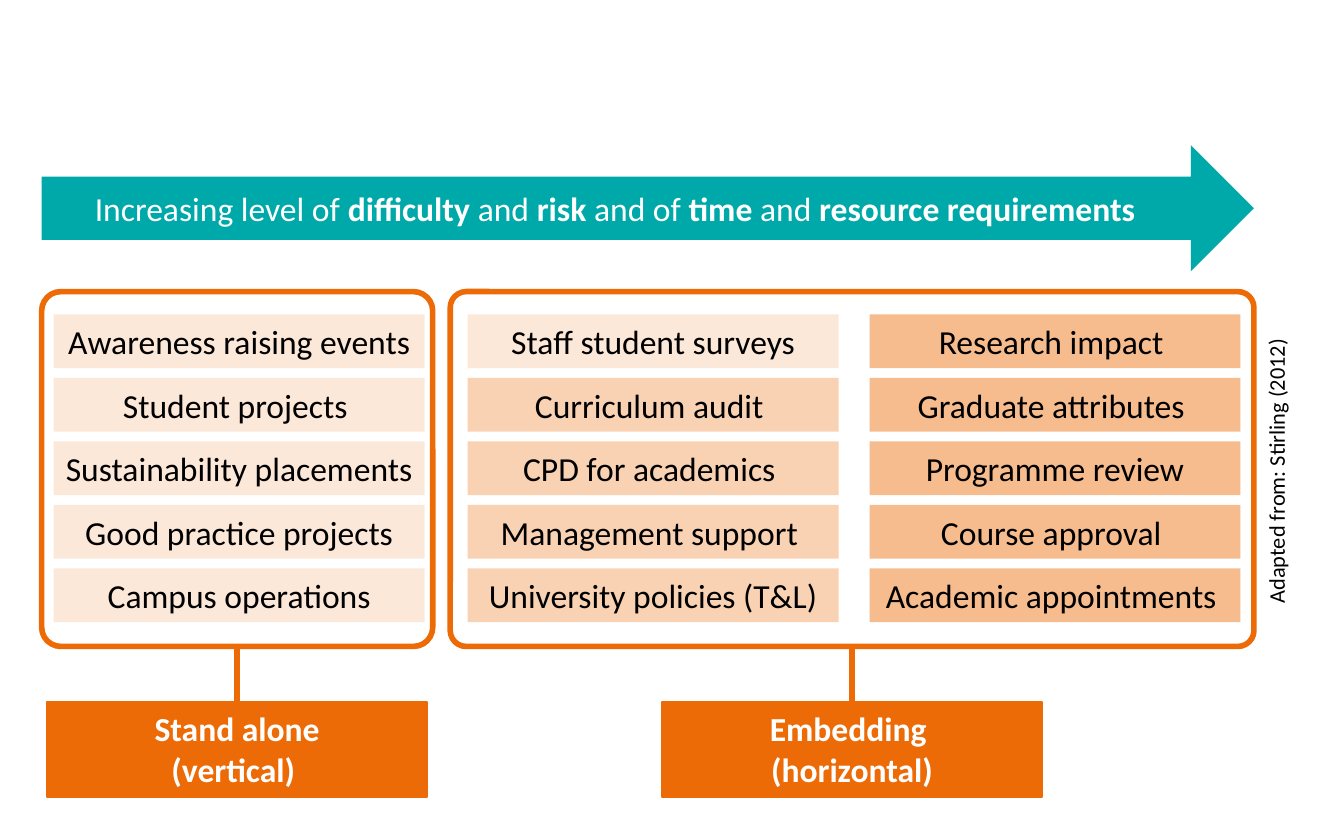
from dataclasses import dataclass

from lxml import etree
from pptx import Presentation
from pptx.dml.color import RGBColor
from pptx.enum import shapes, text
from pptx.oxml import ns
from pptx.util import Inches, Pt

COLORS = {"orange": "ED6B06", "teal": "00A9A9", "black": "000000", "white": "FFFFFF"}
BODY = {"name": "Calibri", "size": Pt(18), "bold": False}
BOLD = {**BODY, "bold": True}
CAPTION = {**BODY, "size": Pt(12)}
ROW_TOP, ROW_STEP = 2.34, 0.4725
FRAME_TOP, FRAME_HEIGHT = 2.17, 2.64
LABEL_TOP, LABEL_WIDTH, LABEL_HEIGHT = 5.22, 2.83, 0.71


@dataclass
class Column:
    left: float
    opacities: list[int]
    items: list[str]


@dataclass
class Group:
    left: float
    width: float
    radius: float
    label: list[str]


COLUMNS = [
    Column(0.4, [15] * 5, [
        "Awareness raising events", "Student projects ", "Sustainability placements ",
        "Good practice projects", "Campus operations"]),
    Column(3.48, [15] + [30] * 4, [
        "Staff student surveys", "Curriculum audit ", "CPD for academics ",
        "Management support ", "University policies (T&L)"]),
    Column(6.47, [45] * 5, [
        "Research impact ", "Graduate attributes ", "Programme review",
        "Course approval ", "Academic appointments "]),
]
GROUPS = [
    Group(0.31, 2.91, 0.054, ["Stand alone", "(vertical) "]),
    Group(3.35, 5.98, 0.045, ["Embedding ", "(horizontal)"]),
]
ARROW_TEXT = [
    ("Increasing level of ", BODY), ("difficulty ", BOLD), ("and ", BODY),
    ("risk ", BOLD), ("and of ", BODY), ("time ", BOLD), ("and ", BODY),
    ("resource requirements ", BOLD),
]


def rgb(name: str) -> RGBColor:
    return RGBColor.from_string(COLORS[name])


def add_box(s, kind, left: float, top: float, width: float, height: float,
            fill: str | None = None, line: float = 0, opacity: int = 100):
    sp = s.shapes.add_shape(kind, Inches(left), Inches(top), Inches(width), Inches(height))
    sp.shadow.inherit = False
    if fill:
        sp.fill.solid()
        sp.fill.fore_color.rgb = rgb(fill)
    else:
        sp.fill.background()
    if line:
        sp.line.color.rgb = rgb("orange")
        sp.line.width = Pt(line)
    else:
        sp.line.fill.background()
    if opacity < 100:
        color = sp.fill._xPr.find(".//" + ns.qn("a:srgbClr"))
        etree.SubElement(color, ns.qn("a:alpha"), val=str(opacity * 1000))
    return sp


def write(sp, paragraphs: list[list[tuple[str, dict]]], color: str) -> None:
    tf = sp.text_frame
    tf.word_wrap = True
    tf.auto_size = text.MSO_AUTO_SIZE.SHAPE_TO_FIT_TEXT
    tf.vertical_anchor = text.MSO_ANCHOR.TOP
    for i, runs in enumerate(paragraphs):
        p = tf.add_paragraph() if i else tf.paragraphs[0]
        p.alignment = text.PP_ALIGN.CENTER
        for words, style in runs:
            r = p.add_run()
            r.text = words
            for key, value in style.items():
                setattr(r.font, key, value)
            r.font.color.rgb = rgb(color)


def add_text(s, left: float, top: float, width: float, height: float):
    return s.shapes.add_textbox(Inches(left), Inches(top), Inches(width), Inches(height))


def add_column(s, column: Column) -> None:
    for i, (item, opacity) in enumerate(zip(column.items, column.opacities)):
        sp = add_box(s, shapes.MSO_SHAPE.RECTANGLE, column.left, ROW_TOP + i * ROW_STEP,
                     2.76, 0.4, "orange", opacity=opacity)
        write(sp, [[(item, BODY)]], "black")
        sp.text_frame.margin_left = sp.text_frame.margin_right = Inches(0.08)


def add_group(s, group: Group) -> None:
    frame = add_box(s, shapes.MSO_SHAPE.ROUNDED_RECTANGLE, group.left, FRAME_TOP,
                    group.width, FRAME_HEIGHT, line=3)
    frame.adjustments[0] = group.radius
    label_left = group.left + (group.width - LABEL_WIDTH) / 2
    label = add_box(s, shapes.MSO_SHAPE.RECTANGLE, label_left, LABEL_TOP,
                    LABEL_WIDTH, LABEL_HEIGHT, "orange", line=1)
    write(label, [[(words, BOLD)] for words in group.label], "white")
    link = s.shapes.add_connector(shapes.MSO_CONNECTOR.STRAIGHT, 0, 0, 0, 0)
    link.begin_connect(frame, 2)
    link.end_connect(label, 0)
    link.line.color.rgb = rgb("orange")
    link.line.width = Pt(3)
    etree.SubElement(link._element.spPr, ns.qn("a:effectLst"))


def main() -> None:
    prs = Presentation()
    prs.slide_width, prs.slide_height = Inches(10), Inches(6.25)
    s = prs.slides.add_slide(prs.slide_layouts[6])
    add_box(s, shapes.MSO_SHAPE.RIGHT_ARROW, 0.31, 1.08, 9.02, 0.94, "teal")
    write(add_text(s, 0.39, 1.35, 8.43, 0.4), [ARROW_TEXT], "white")
    for column in COLUMNS:
        add_column(s, column)
    for group in GROUPS:
        add_group(s, group)
    credit = add_text(s, 8.28, 3.35, 2.44, 0.31)
    credit.rotation = 270
    write(credit, [[("Adapted from: Stirling (2012)", CAPTION)]], "black")
    prs.save("out.pptx")


if __name__ == "__main__":
    main()
